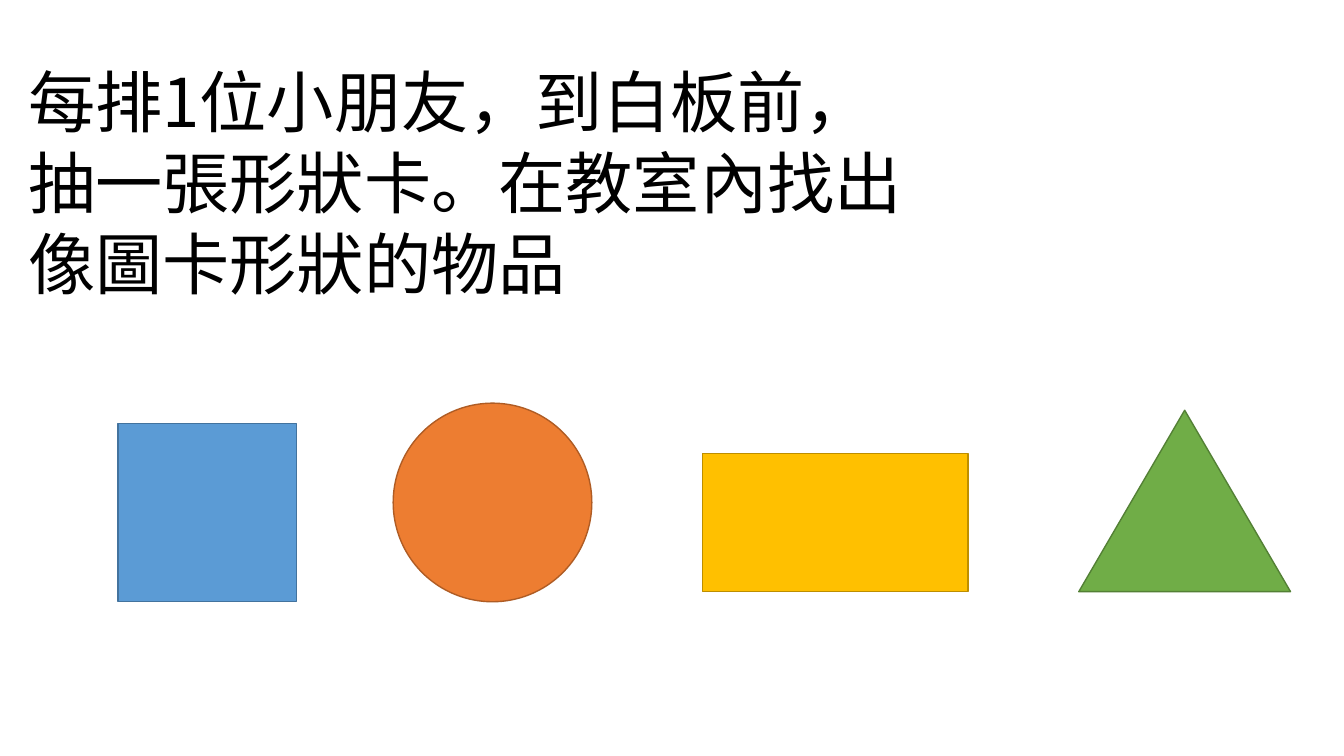
from lxml.etree import SubElement
from pptx import Presentation
from pptx.dml.color import RGBColor
from pptx.enum.shapes import MSO_SHAPE as Preset
from pptx.oxml.ns import qn
from pptx.util import Inches, Pt

FONT = "Noto Sans CJK SC"
BLACK = RGBColor(0x00, 0x00, 0x00)
BLUE, DARK_BLUE = RGBColor(0x5B, 0x9B, 0xD5), RGBColor(0x43, 0x73, 0x9E)
ORANGE, DARK_ORANGE = RGBColor(0xED, 0x7D, 0x31), RGBColor(0xAF, 0x5C, 0x24)
YELLOW, DARK_YELLOW = RGBColor(0xFF, 0xC0, 0x00), RGBColor(0xBD, 0x8E, 0x00)
GREEN, DARK_GREEN = RGBColor(0x70, 0xAD, 0x47), RGBColor(0x53, 0x80, 0x35)

INSTRUCTIONS = [
    "每排1位小朋友，到白板前，",
    "抽一張形狀卡。在教室內找出",
    "像圖卡形狀的物品",
]
# Preset, left, bottom, width, height (inches), fill, outline
SHAPE_CARDS = [
    (Preset.RECTANGLE, 1.17, 5.97, 1.77, 1.77, BLUE, DARK_BLUE),
    (Preset.OVAL, 3.9, 5.97, 1.97, 1.97, ORANGE, DARK_ORANGE),
    (Preset.RECTANGLE, 6.97, 5.87, 2.63, 1.37, YELLOW, DARK_YELLOW),
    (Preset.ISOSCELES_TRIANGLE, 10.7, 5.87, 2.1, 1.8, GREEN, DARK_GREEN),
]
TEXT_FRAME_FORMAT = {
    "word_wrap": True,
    "margin_top": Inches(0.11),
    "margin_bottom": 0,
}
TEXT_FORMAT = {"name": FONT, "size": Pt(48)}


def set_attributes(target, values):
    for name, value in values.items():
        setattr(target, name, value)


def add_instructions(slide):
    box = slide.shapes.add_textbox(
        Inches(0.18), Inches(0.48), Inches(13.33), Inches(2.52))
    frame = box.text_frame
    set_attributes(frame, TEXT_FRAME_FORMAT)
    frame.text = "\n".join(INSTRUCTIONS)
    for paragraph in frame.paragraphs:
        paragraph.line_spacing = Pt(58)
        for run in paragraph.runs:
            set_attributes(run.font, TEXT_FORMAT)
            run.font.color.rgb = BLACK
            east_asian = SubElement(run.font._element, qn("a:ea"))
            east_asian.set("typeface", FONT)


def add_shape_card(slide, preset, left, bottom, width, height, fill, outline):
    shape = slide.shapes.add_shape(
        preset, Inches(left), Inches(bottom - height),
        Inches(width), Inches(height))
    shape.shadow.inherit = False
    shape.fill.solid()
    shape.fill.fore_color.rgb = fill
    shape.line.color.rgb = outline
    shape.line.width = Pt(1)


def main():
    presentation = Presentation()
    presentation.slide_width = Inches(13.33)
    presentation.slide_height = Inches(7.5)
    slide = presentation.slides.add_slide(presentation.slide_layouts[6])
    add_instructions(slide)
    for card in SHAPE_CARDS:
        add_shape_card(slide, *card)
    presentation.save("out.pptx")


if __name__ == "__main__":
    main()
